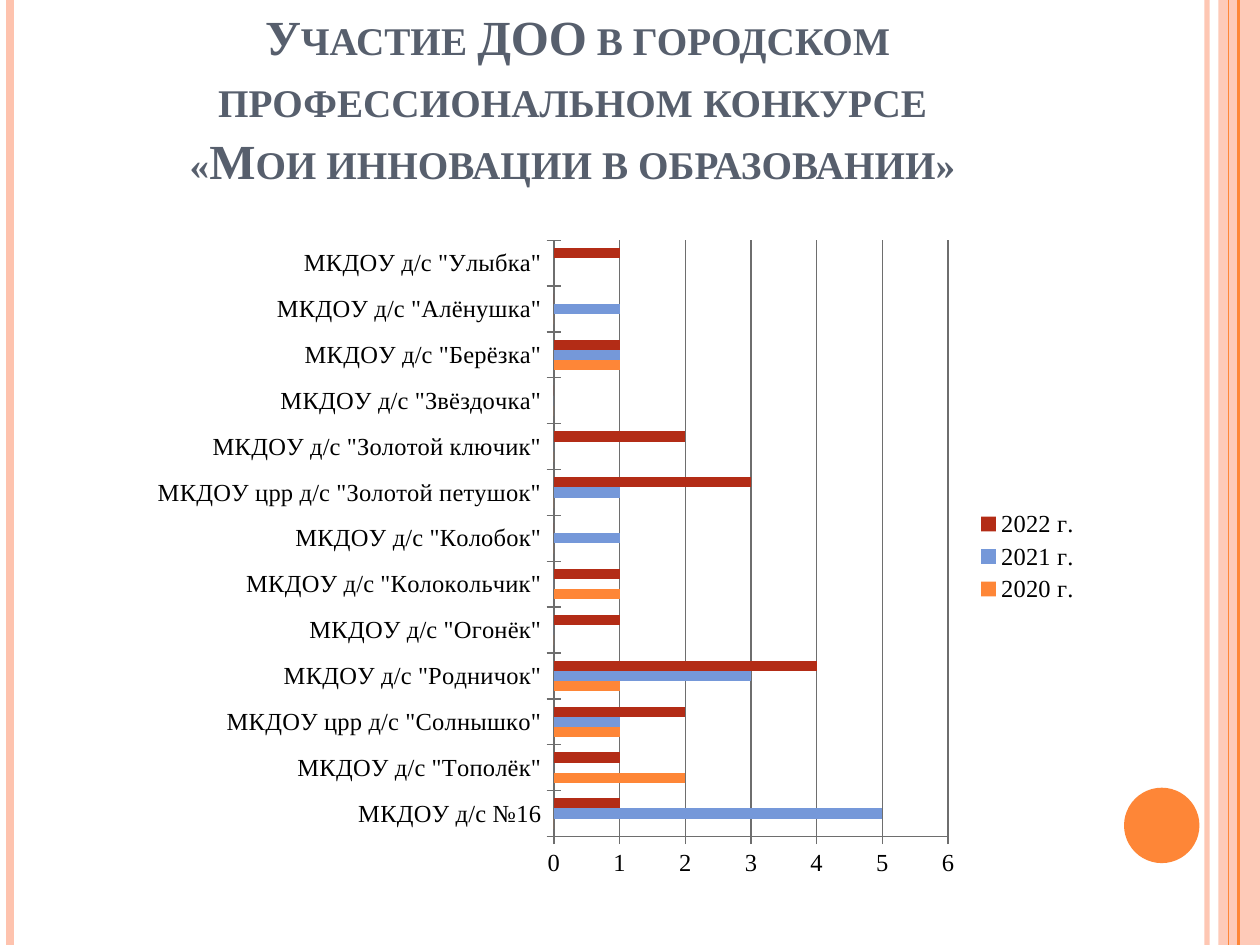
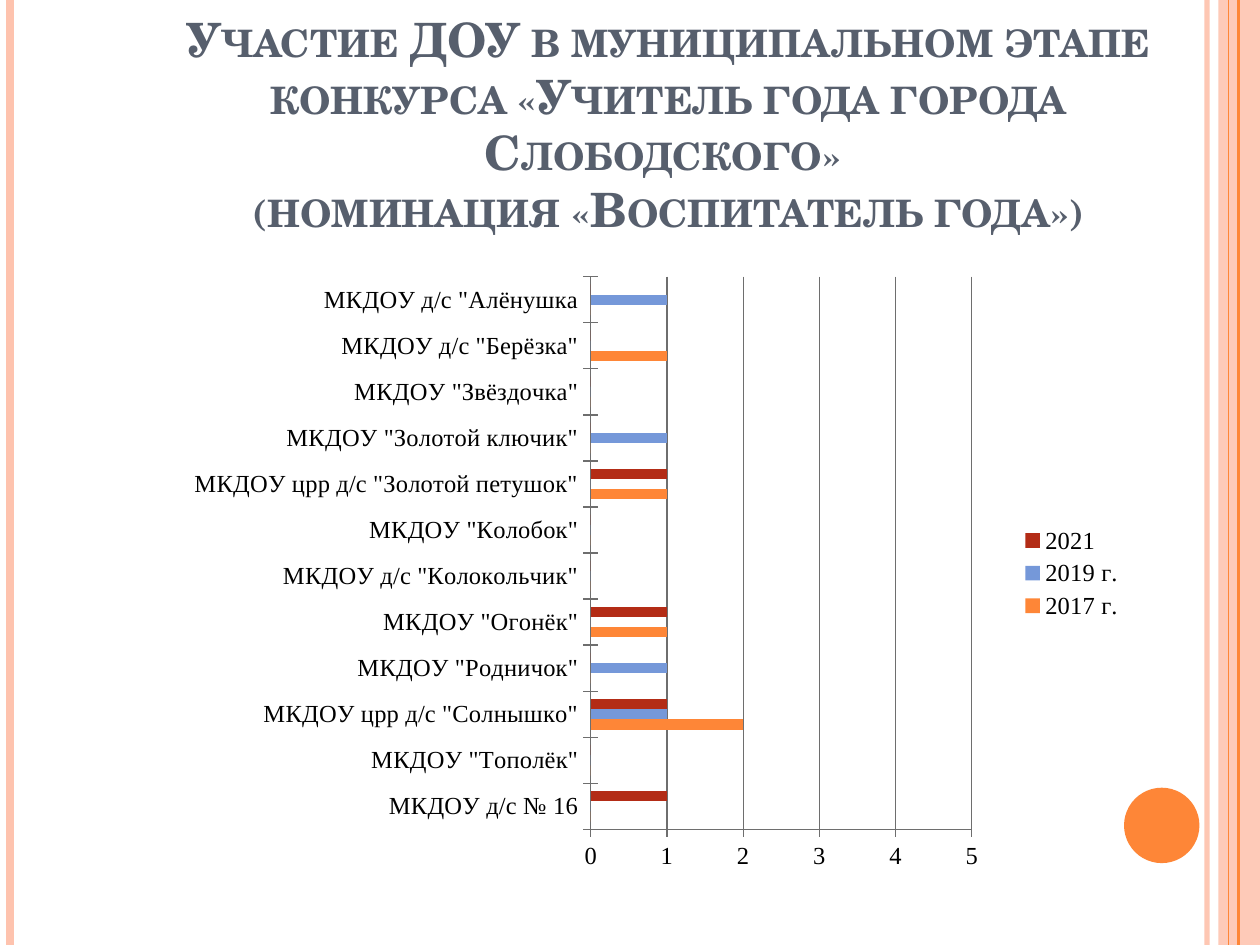
from dataclasses import dataclass
from typing import Optional

from lxml.etree import SubElement
from pptx import Presentation
from pptx.chart.data import CategoryChartData
from pptx.dml.color import RGBColor
from pptx.enum.chart import XL_CHART_TYPE, XL_LEGEND_POSITION, XL_TICK_MARK
from pptx.enum.shapes import MSO_CONNECTOR, MSO_SHAPE
from pptx.enum.text import MSO_ANCHOR, MSO_AUTO_SIZE, PP_ALIGN
from pptx.oxml.ns import qn
from pptx.util import Cm, Pt

COLORS = {
    "title": "575F6D", "text": "000000", "pale": "FEC3AE", "orange": "FE8637",
    "blue": "7598D9", "red": "B32C16", "axis": "6E6E6E",
}
SERIES_COLORS = ("orange", "blue", "red")
CHART_FONT = "Times New Roman"
WIDTH, HEIGHT = 25.4, 19.05


@dataclass
class Box:
    """Position and size in centimetres."""
    left: float
    top: float
    width: float
    height: float

    def emu(self) -> tuple:
        """Return the four lengths for python-pptx."""
        return tuple(Cm(v) for v in (self.left, self.top, self.width, self.height))


@dataclass
class Stripe:
    """Vertical line over the full slide height."""
    x: float
    color: str
    width: float
    alpha: Optional[int] = None


@dataclass
class ChartSlide:
    """Contents and placement of one slide."""
    title: str
    title_box: Box
    font: str
    size: float
    spacing: float
    chart_box: Box
    plot: tuple
    maximum: int
    categories: list
    series: dict


STRIPES = (
    Stripe(24.33, "pale", 3, 93),
    Stripe(0.2, "pale", 4.5),
    Stripe(24.97, "orange", 1.5),
    Stripe(24.77, "orange", 0.75),
)
BAND = Box(24.56, 0, 0.84, HEIGHT)
DISC = Box(22.66, 15.88, 1.52, 1.52)

SLIDES = (
    ChartSlide(
        "Участие ДОО в городском профессиональном конкурсе \v«Мои инновации в образовании» ",
        Box(1.27, 0.76, 20.75, 3.18), "Times New Roman", 28, 1.05,
        Box(1.27, 4.45, 20.75, 13.54), (0.477, 0.029, 0.383, 0.888), 6,
        ['МКДОУ д/с №16', 'МКДОУ д/с "Тополёк"', 'МКДОУ црр д/с "Солнышко"',
         'МКДОУ д/с "Родничок"', 'МКДОУ д/с "Огонёк"', 'МКДОУ д/с "Колокольчик"',
         'МКДОУ д/с "Колобок"', 'МКДОУ црр д/с "Золотой петушок"',
         'МКДОУ д/с "Золотой ключик"', 'МКДОУ д/с "Звёздочка"',
         'МКДОУ д/с "Берёзка"', 'МКДОУ д/с "Алёнушка"', 'МКДОУ д/с "Улыбка"'],
        {"2020 г.": (0, 2, 1, 1, 0, 1, 0, 0, 0, 0, 1, 0, None),
         "2021 г.": (5, 0, 1, 3, 0, 0, 1, 1, 0, 0, 1, 1, None),
         "2022 г.": (1, 1, 2, 4, 1, 1, 0, 3, 2, 0, 1, 0, 1)},
    ),
    ChartSlide(
        "Участие ДОУ в муниципальном этапе конкурса «Учитель года города Слободского» "
        "\v(номинация «Воспитатель года»)",
        Box(3.1, 1.73, 20.75, 3.18), "TeX Gyre Schola", 27, 1.0,
        Box(2.31, 5.13, 20.6, 12.85), (0.466, 0.035, 0.373, 0.867), 5,
        ['МКДОУ д/с № 16', 'МКДОУ "Тополёк"', 'МКДОУ црр д/с "Солнышко"',
         'МКДОУ "Родничок"', 'МКДОУ "Огонёк"', 'МКДОУ д/с "Колокольчик"',
         'МКДОУ "Колобок"', 'МКДОУ црр д/с "Золотой петушок"',
         'МКДОУ "Золотой ключик"', 'МКДОУ "Звёздочка"',
         'МКДОУ д/с "Берёзка"', 'МКДОУ д/с "Алёнушка'],
        {"2017 г.": (0, 0, 2, 0, 1, 0, 0, 1, 0, 0, 1, 0),
         "2019 г.": (0, 0, 1, 1, 0, 0, 0, 0, 1, 0, 0, 1),
         "2021": (1, 0, 1, 0, 1, 0, 0, 1, 0, 0, 0, 0)},
    ),
)


def rgb(name: str) -> RGBColor:
    """Look up a colour by name."""
    return RGBColor.from_string(COLORS[name])


def set_alpha(element, percent: int) -> None:
    """Set the opacity of the solid fill inside an element."""
    color = element.find(".//" + qn("a:srgbClr"))
    SubElement(color, qn("a:alpha"), val=str(percent * 1000))


def add_stripe(s, stripe: Stripe) -> None:
    """Draw a full-height vertical line."""
    x = Cm(stripe.x)
    line = s.shapes.add_connector(MSO_CONNECTOR.STRAIGHT, x, 0, x, Cm(HEIGHT))
    line.line.color.rgb = rgb(stripe.color)
    line.line.width = Pt(stripe.width)
    properties = line._element.spPr
    if stripe.alpha:
        set_alpha(properties, stripe.alpha)
    SubElement(properties, qn("a:effectLst"))


def add_filled(s, kind: MSO_SHAPE, box: Box, color: str, alpha: Optional[int] = None) -> None:
    """Draw a filled shape without outline or shadow."""
    sp = s.shapes.add_shape(kind, *box.emu())
    sp.shadow.inherit = False
    sp.fill.solid()
    sp.fill.fore_color.rgb = rgb(color)
    sp.line.fill.background()
    if alpha:
        set_alpha(sp._element.spPr, alpha)


def add_frame(s) -> None:
    """Draw the decoration shared by all slides."""
    add_filled(s, MSO_SHAPE.RECTANGLE, BAND, "pale", 87)
    for stripe in STRIPES:
        add_stripe(s, stripe)
    add_filled(s, MSO_SHAPE.OVAL, DISC, "orange")


def write_text(tf, text: str, *, font: str, size: float, color: str, spacing: float = 1.0) -> None:
    """Write centred bold small-caps text."""
    p = tf.paragraphs[0]
    p.text = text
    p.alignment = PP_ALIGN.CENTER
    p.line_spacing = spacing
    for r in p.runs:
        r.font.name, r.font.size, r.font.bold = font, Pt(size), True
        r.font.color.rgb = rgb(color)
        r.font._element.set("cap", "small")


def add_title(s, item: ChartSlide) -> None:
    """Place and fill the title placeholder."""
    sp = s.shapes.title
    sp.left, sp.top, sp.width, sp.height = item.title_box.emu()
    tf = sp.text_frame
    tf.auto_size = MSO_AUTO_SIZE.NONE
    tf.word_wrap = True
    tf.vertical_anchor = MSO_ANCHOR.BOTTOM
    write_text(tf, item.title, font=item.font, size=item.size, color="title", spacing=item.spacing)


def set_plot_layout(chart, plot: tuple) -> None:
    """Fix the inner plot area as fractions of the chart."""
    area = chart._chartSpace.chart.plotArea
    layout = area.find(qn("c:layout"))
    if layout is None:
        layout = SubElement(area, qn("c:layout"))
        area.insert(0, layout)
    manual = SubElement(layout, qn("c:manualLayout"))
    settings = [("layoutTarget", "inner"), ("xMode", "edge"), ("yMode", "edge")]
    for tag, value in settings + list(zip("xywh", plot)):
        SubElement(manual, qn(f"c:{tag}"), val=str(value))


def add_bar_chart(s, item: ChartSlide) -> None:
    """Add the clustered bar chart."""
    data = CategoryChartData()
    data.categories = item.categories
    for name, values in item.series.items():
        data.add_series(name, values)
    chart = s.shapes.add_chart(XL_CHART_TYPE.BAR_CLUSTERED, *item.chart_box.emu(), data).chart
    chart.has_title = False
    chart.font.name, chart.font.size = CHART_FONT, Pt(14)
    chart.font.color.rgb = rgb("text")
    chart.has_legend = True
    chart.legend.position = XL_LEGEND_POSITION.RIGHT
    chart.legend.include_in_layout = False
    bars = chart.plots[0]
    bars.gap_width, bars.overlap, bars.vary_by_categories = 150, 0, False
    for series, color in zip(bars.series, SERIES_COLORS):
        series.format.fill.solid()
        series.format.fill.fore_color.rgb = rgb(color)
    value_axis = chart.value_axis
    value_axis.minimum_scale, value_axis.maximum_scale = 0, item.maximum
    value_axis.major_unit = 1
    value_axis.has_major_gridlines = True
    for axis in (chart.category_axis, value_axis):
        axis.major_tick_mark = XL_TICK_MARK.CROSS
    for part in (chart.category_axis, value_axis, value_axis.major_gridlines):
        part.format.line.color.rgb = rgb("axis")
        part.format.line.width = Pt(0.75)
    set_plot_layout(chart, item.plot)


def main() -> None:
    """Build and save the presentation."""
    prs = Presentation()
    prs.slide_width, prs.slide_height = Cm(WIDTH), Cm(HEIGHT)
    for item in SLIDES:
        s = prs.slides.add_slide(prs.slide_layouts[5])
        add_frame(s)
        add_title(s, item)
        add_bar_chart(s, item)
    prs.save("out.pptx")


if __name__ == "__main__":
    main()
